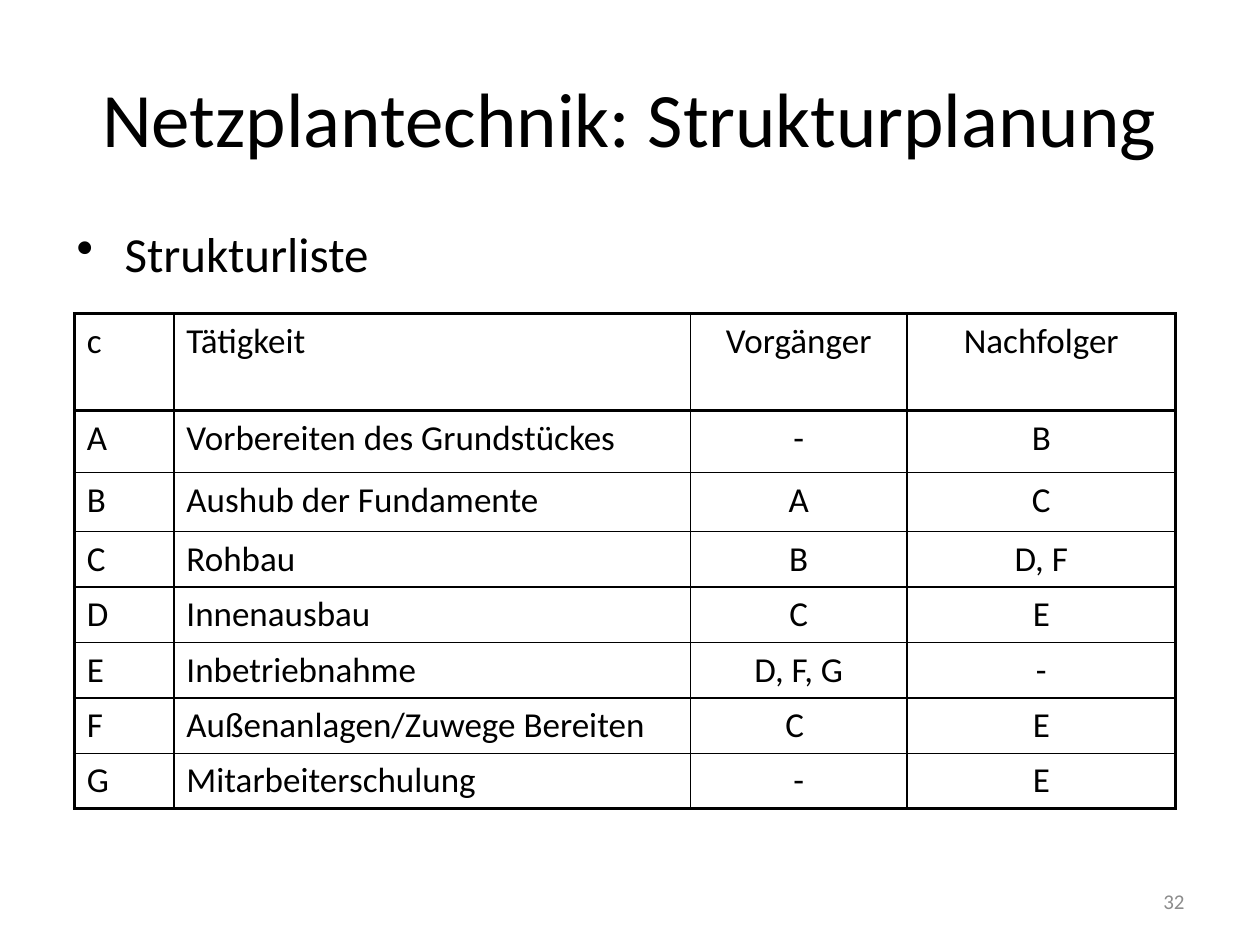
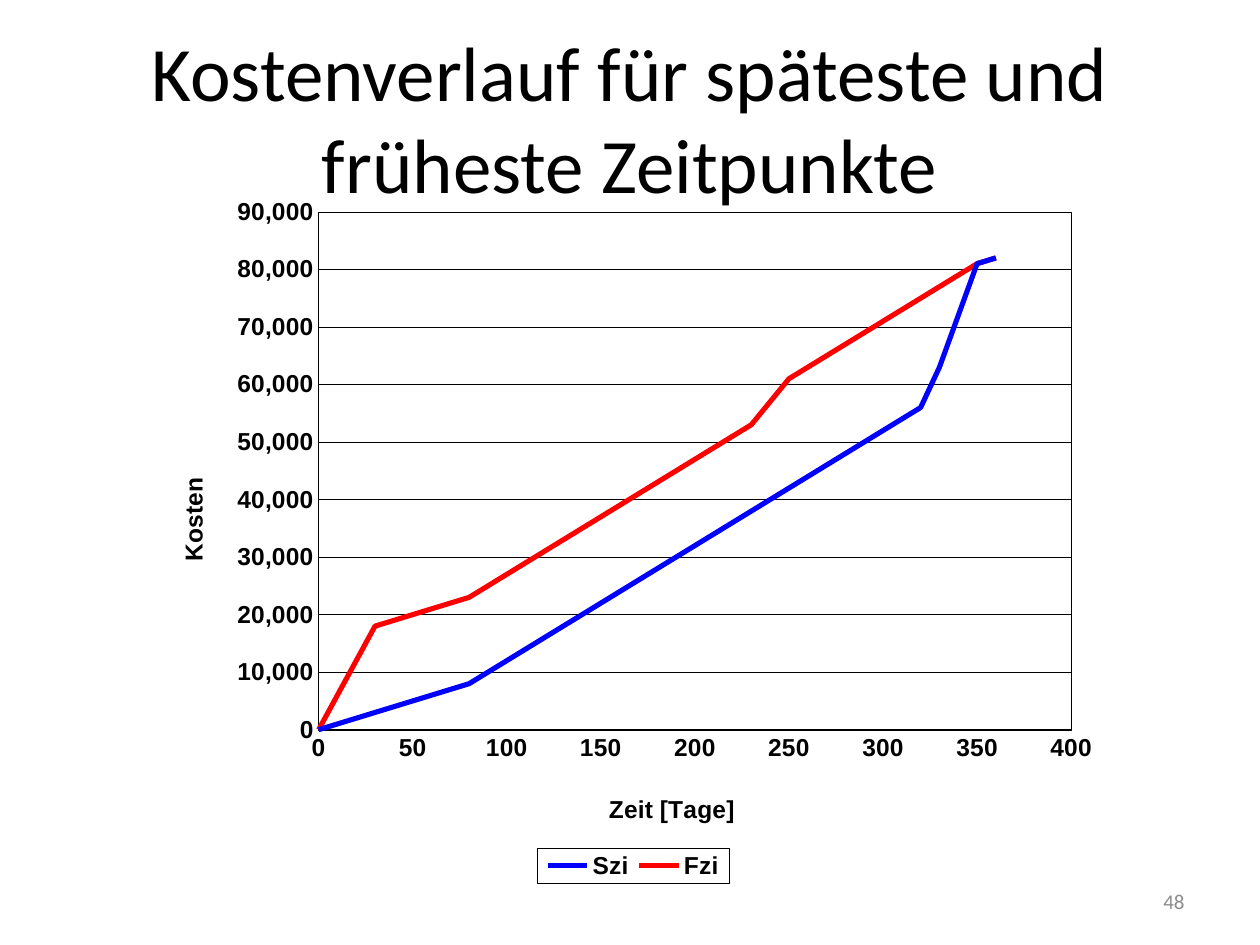
from dataclasses import dataclass

from lxml import etree
from pptx import Presentation
from pptx import util as u
from pptx.chart.data import XyChartData
from pptx.dml.color import RGBColor
from pptx.enum import chart as ch, text
from pptx.oxml import parse_xml
from pptx.oxml.ns import nsdecls, qn
from pptx.util import Inches


@dataclass(frozen=True)
class Theme:
    ink: str = "000000"
    muted: str = "8C8C8C"
    late: str = "0000FF"
    early: str = "FF0000"
    font: str = "Calibri"
    chart_font: str = "Arial"
    title: float = 44
    body: float = 28
    cell: float = 20
    chart: float = 14
    number: float = 12
    thin: float = 1
    thick: float = 2
    hairline: float = 0.25
    series: float = 2.92


def style_font(font, name, size, color, bold=False):
    font.name, font.size, font.bold = name, u.Pt(size), bold
    font.color.rgb = RGBColor.from_string(color)


def style_line(line, color, width):
    line.color.rgb = RGBColor.from_string(color)
    line.width = u.Pt(width)


def set_indent(p, inches):
    """Hanging indent: the first line starts at the margin."""
    pPr = p._p.get_or_add_pPr()
    pPr.set("marL", str(Inches(inches)))
    pPr.set("indent", str(-Inches(inches)))
    return pPr


def set_border(cell, side, color, width):
    cell._tc.get_or_add_tcPr().append(parse_xml(
        f'<a:ln{side} {nsdecls("a")} w="{u.Pt(width)}"><a:solidFill>'
        f'<a:srgbClr val="{color}"/></a:solidFill></a:ln{side}>'))


def place(el, **fractions):
    """Fix a chart part at fractions of the chart's width and height."""
    for old in el.findall(qn("c:layout")):
        el.remove(old)
    layout = etree.Element(qn("c:layout"))
    manual = etree.SubElement(layout, qn("c:manualLayout"))
    if el.tag == qn("c:plotArea"):
        etree.SubElement(manual, qn("c:layoutTarget"), val="inner")
    for key in ("x", "y"):
        etree.SubElement(manual, qn(f"c:{key}Mode"), val="edge")
    for key, value in fractions.items():
        etree.SubElement(manual, qn(f"c:{key}"), val=str(value))
    heads = [c for c in el if c.tag in (qn("c:tx"), qn("c:legendPos"))]
    el.insert(el.index(heads[0]) + 1 if heads else 0, layout)


def outline(el, color, width):
    """Give a chart part a plain border without fill."""
    spPr = parse_xml(
        f'<c:spPr {nsdecls("c", "a")}><a:noFill/><a:ln w="{u.Pt(width)}">'
        f'<a:solidFill><a:srgbClr val="{color}"/></a:solidFill></a:ln></c:spPr>')
    txPr = el.find(qn("c:txPr"))
    if txPr is None:
        el.append(spPr)
    else:
        txPr.addprevious(spPr)


class Deck:
    def __init__(self, theme):
        self.theme = theme
        self.prs = Presentation()
        self.prs.slide_width, self.prs.slide_height = Inches(10), Inches(7.5)
        self.s = None

    def new_slide(self, title, number):
        t = self.theme
        self.s = self.prs.slides.add_slide(self.prs.slide_layouts[6])
        self.text(title, (0.5, 0.3, 9, 1.25), t.title, t.ink,
                  text.PP_ALIGN.CENTER, text.MSO_ANCHOR.MIDDLE)
        self.text(str(number), (7.17, 6.95, 2.33, 0.4), t.number, t.muted,
                  text.PP_ALIGN.RIGHT, text.MSO_ANCHOR.MIDDLE)

    def text(self, content, box, size, color, align=text.PP_ALIGN.LEFT,
             anchor=text.MSO_ANCHOR.TOP):
        tf = self.s.shapes.add_textbox(*map(Inches, box)).text_frame
        tf.word_wrap, tf.vertical_anchor = True, anchor
        p = tf.paragraphs[0]
        p.text, p.alignment = content, align
        style_font(p.font, self.theme.font, size, color)
        return p

    def bullet(self, content, box):
        p = self.text(content, box, self.theme.body, self.theme.ink)
        p.line_spacing, p.space_before = 0.9, u.Pt(0.2 * self.theme.body)
        pPr = set_indent(p, 0.38)
        bullet = parse_xml(f'<a:buChar {nsdecls("a")} char="•"/>')
        pPr.find(qn("a:defRPr")).addprevious(bullet)

    def table(self, rows, left, top, widths, heights, aligns):
        t = self.theme
        frame = self.s.shapes.add_table(
            len(rows), len(widths), Inches(left), Inches(top),
            Inches(sum(widths)), Inches(sum(heights)))
        table = frame.table
        table.first_row = table.horz_banding = False
        for column, width in zip(table.columns, widths):
            column.width = Inches(width)
        last_row, last_col = len(rows) - 1, len(widths) - 1
        for i, (row, height) in enumerate(zip(rows, heights)):
            table.rows[i].height = Inches(height)
            for j, (content, align) in enumerate(zip(row, aligns)):
                cell = table.cell(i, j)
                p = cell.text_frame.paragraphs[0]
                p.text, p.alignment = content, align
                set_indent(p, 0.67)
                style_font(p.font, t.font, t.cell, t.ink)
                thick_sides = {"L": j == 0, "R": j == last_col,
                               "T": i <= 1, "B": i in (0, last_row)}
                for side, is_thick in thick_sides.items():
                    set_border(cell, side, t.ink, t.thick if is_thick else t.thin)
                cell.fill.background()

    def axis(self, axis, title, maximum, step, number_format, title_at):
        t = self.theme
        axis.minimum_scale, axis.maximum_scale, axis.major_unit = 0, maximum, step
        axis.major_tick_mark = axis.minor_tick_mark = ch.XL_TICK_MARK.NONE
        axis.tick_labels.number_format = number_format
        axis.tick_labels.number_format_is_linked = False
        style_font(axis.tick_labels.font, t.chart_font, t.chart, t.ink, True)
        style_line(axis.format.line, t.ink, t.hairline)
        axis.axis_title.text_frame.text = title
        p = axis.axis_title.text_frame.paragraphs[0]
        style_font(p.font, t.chart_font, t.chart, t.ink, True)
        place(axis.axis_title._element, x=title_at[0], y=title_at[1])

    def cost_chart(self, days, costs, colors, box):
        t = self.theme
        data = XyChartData(number_format="#,##0")
        for name, values in costs.items():
            series = data.add_series(name)
            for x, y in zip(days, values):
                series.add_data_point(x, y)
        chart = self.s.shapes.add_chart(
            ch.XL_CHART_TYPE.XY_SCATTER_LINES_NO_MARKERS,
            *map(Inches, box), data).chart
        chart.has_title = False
        style_font(chart.font, t.chart_font, t.chart, t.ink)
        for series, color in zip(chart.plots[0].series, colors):
            series.smooth = False
            series.marker.style = ch.XL_MARKER_STYLE.NONE
            style_line(series.format.line, color, t.series)

        self.axis(chart.category_axis, "Zeit [Tage]", 400, 50, "General", (0.47, 0.86))
        self.axis(chart.value_axis, "Kosten", 90000, 10000, "#,##0", (0.02, 0.41))
        chart.category_axis.has_major_gridlines = False
        chart.value_axis.has_major_gridlines = True
        style_line(chart.value_axis.major_gridlines.format.line, t.ink, t.hairline)

        chart.has_legend = True
        legend = chart.legend
        legend.position = ch.XL_LEGEND_POSITION.BOTTOM
        legend.include_in_layout = False
        style_font(legend.font, t.chart_font, t.chart, t.ink, True)
        place(legend._element, x=0.4, y=0.945, w=0.2, h=0.05)
        outline(legend._element, t.ink, t.hairline)
        plot_area = chart._chartSpace.chart.plotArea
        place(plot_area, x=0.172, y=0.038, w=0.785, h=0.738)
        outline(plot_area, t.ink, t.hairline)


def main():
    theme = Theme()
    deck = Deck(theme)

    deck.new_slide("Netzplantechnik: Strukturplanung", 32)
    activities = [
        ("c", "Tätigkeit", "Vorgänger", "Nachfolger"),
        ("A", "Vorbereiten des Grundstückes", "-", "B"),
        ("B", "Aushub der Fundamente", "A", "C"),
        ("C", "Rohbau", "B", "D, F"),
        ("D", "Innenausbau", "C", "E"),
        ("E", "Inbetriebnahme", "D, F, G", "-"),
        ("F", "Außenanlagen/Zuwege Bereiten", "C ", "E"),
        ("G", "Mitarbeiterschulung", "-", "E"),
    ]
    align = text.PP_ALIGN
    deck.table(activities, 0.59, 2.49, [0.79, 4.1, 1.72, 2.13],
               [0.77, 0.49, 0.47] + [0.44] * 5,
               [align.JUSTIFY] * 2 + [align.CENTER] * 2)
    deck.bullet("Strukturliste", (0.51, 1.78, 4.42, 0.55))

    deck.new_slide("Kostenverlauf für späteste und früheste Zeitpunkte", 48)
    days = [0, 20, 30, 80, 230, 250, 320, 330, 350, 360]
    costs = {
        "Szi": [0, 2000, 3000, 8000, 38000, 42000, 56000, 63000, 81000, 82000],
        "Fzi": [0, 12000, 18000, 23000, 53000, 61000, 75000, 77000, 81000, 82000],
    }
    deck.cost_chart(days, costs, (theme.late, theme.early), (1.22, 1.47, 7.61, 5.57))

    deck.prs.save("out.pptx")


if __name__ == "__main__":
    main()
